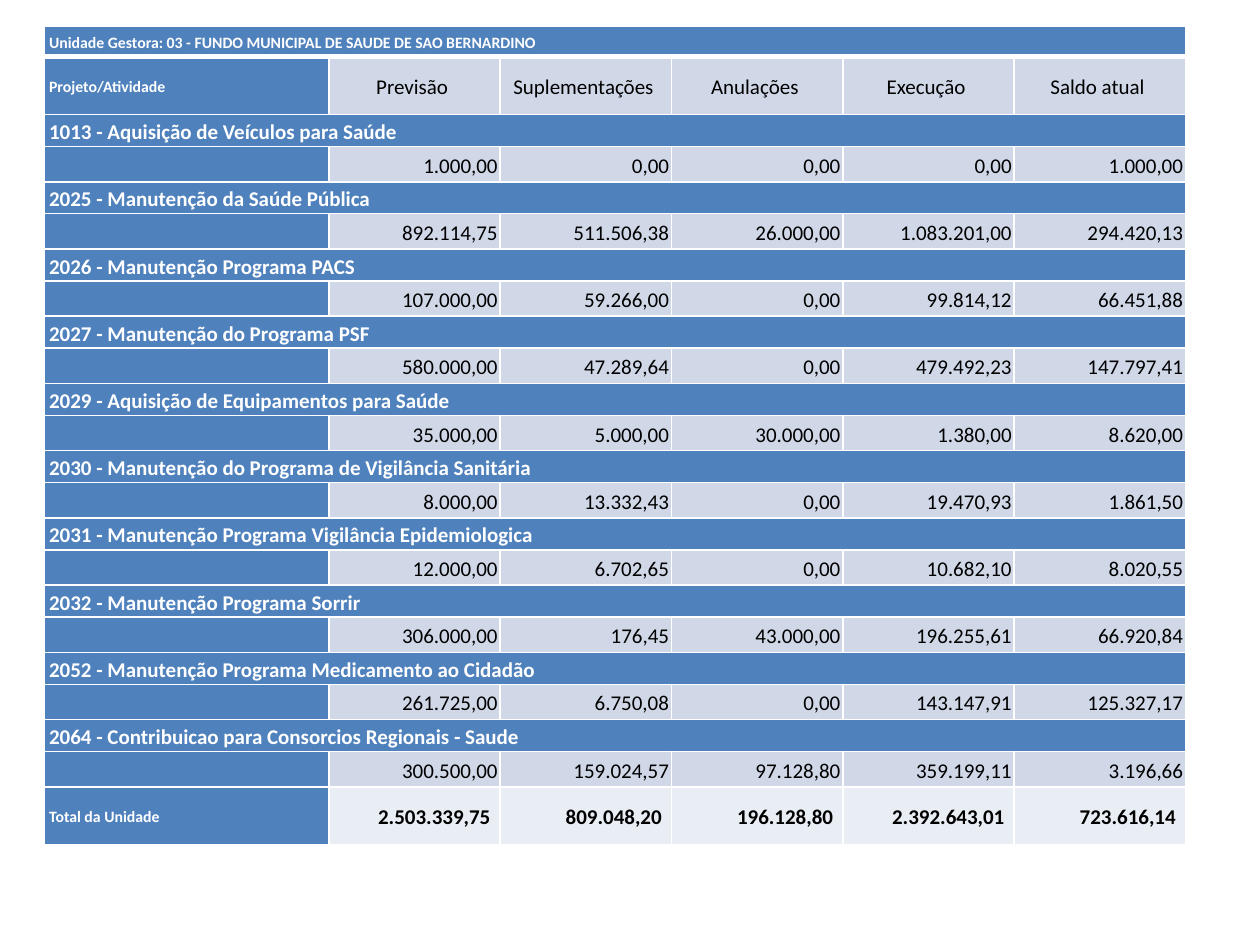
import dataclasses
import itertools

import lxml.etree
import pptx
import pptx.dml.color
import pptx.enum.text
import pptx.oxml.ns
import pptx.table
import pptx.util

ALIGN = pptx.enum.text.PP_ALIGN
SLIDE_WIDTH, SLIDE_HEIGHT = 10, 7.5
TABLE_LEFT, TABLE_TOP = 0.035, 0.028
LABEL_WIDTH, AMOUNT_WIDTH = 2.26, 1.36
BLUE, PALE, PALEST, WHITE, BLACK = "4F81BD", "D0D8E8", "E9EDF4", "FFFFFF", "000000"


@dataclasses.dataclass(frozen=True)
class CellStyle:
    fill: str
    color: str
    size: int = 12
    bold: bool = False
    align: ALIGN = ALIGN.LEFT
    margin_x: float = 0.04
    margin_y: float = 0.01
    bottom_line: int = 1


@dataclasses.dataclass(frozen=True)
class Band:
    height: float
    label: str
    label_style: CellStyle
    amounts: tuple[str, ...] = ()
    amount_style: CellStyle | None = None


@dataclasses.dataclass(frozen=True)
class Project:
    name: str
    amounts: tuple[str, ...]


UNIT = CellStyle(BLUE, WHITE, size=9, bold=True, bottom_line=3)
SIDE = CellStyle(BLUE, WHITE, size=9, bold=True)
PROJECT = CellStyle(BLUE, WHITE, bold=True)
HEADING = CellStyle(PALE, BLACK, align=ALIGN.CENTER)
AMOUNT = CellStyle(PALE, BLACK, align=ALIGN.RIGHT, margin_x=0.02, margin_y=0.02)
TOTAL = CellStyle(PALEST, BLACK, bold=True, align=ALIGN.RIGHT)

HEADINGS = ("Previsão ", "Suplementações ", "Anulações ", "Execução ", "Saldo atual ")
TOTALS = ("2.503.339,75 ", "809.048,20 ", "196.128,80 ", "2.392.643,01 ", "723.616,14 ")
PROJECTS = [
    Project("1013 - Aquisição de Veículos para Saúde",
            ("1.000,00", "0,00", "0,00", "0,00", "1.000,00")),
    Project("2025 - Manutenção da Saúde Pública",
            ("892.114,75", "511.506,38", "26.000,00", "1.083.201,00", "294.420,13")),
    Project("2026 - Manutenção Programa PACS",
            ("107.000,00", "59.266,00", "0,00", "99.814,12", "66.451,88")),
    Project("2027 - Manutenção do Programa PSF",
            ("580.000,00", "47.289,64", "0,00", "479.492,23", "147.797,41")),
    Project("2029 - Aquisição de Equipamentos para Saúde",
            ("35.000,00", "5.000,00", "30.000,00", "1.380,00", "8.620,00")),
    Project("2030 - Manutenção do Programa de Vigilância Sanitária",
            ("8.000,00", "13.332,43", "0,00", "19.470,93", "1.861,50")),
    Project("2031 - Manutenção Programa Vigilância Epidemiologica",
            ("12.000,00", "6.702,65", "0,00", "10.682,10", "8.020,55")),
    Project("2032 - Manutenção Programa Sorrir",
            ("306.000,00", "176,45", "43.000,00", "196.255,61", "66.920,84")),
    Project("2052 - Manutenção Programa Medicamento ao Cidadão",
            ("261.725,00", "6.750,08", "0,00", "143.147,91", "125.327,17")),
    Project("2064 - Contribuicao para Consorcios Regionais - Saude",
            ("300.500,00", "159.024,57", "97.128,80", "359.199,11", "3.196,66")),
]


def rgb(value: str) -> pptx.dml.color.RGBColor:
    return pptx.dml.color.RGBColor.from_string(value)


def draw_borders(cell: pptx.table._Cell, bottom: int, top: int) -> None:
    qn = pptx.oxml.ns.qn
    properties = cell._tc.get_or_add_tcPr()
    for side, points in (("L", 1), ("R", 1), ("T", top), ("B", bottom)):
        line = lxml.etree.SubElement(properties, qn(f"a:ln{side}"), w=str(pptx.util.Pt(points)))
        solid = lxml.etree.SubElement(line, qn("a:solidFill"))
        lxml.etree.SubElement(solid, qn("a:srgbClr"), val=WHITE)


def fill_cell(cell: pptx.table._Cell, text: str, style: CellStyle, top: int) -> None:
    draw_borders(cell, style.bottom_line, top)
    cell.fill.solid()
    cell.fill.fore_color.rgb = rgb(style.fill)
    cell.margin_left = cell.margin_right = pptx.util.Inches(style.margin_x)
    cell.margin_top = cell.margin_bottom = pptx.util.Inches(style.margin_y)
    cell.vertical_anchor = pptx.enum.text.MSO_ANCHOR.MIDDLE
    paragraph = cell.text_frame.paragraphs[0]
    paragraph.alignment = style.align
    paragraph.line_spacing = 1.15
    if not text:
        lxml.etree.SubElement(paragraph._p, pptx.oxml.ns.qn("a:endParaRPr"),
                              sz=str(style.size * 100))
        return
    paragraph.text = text
    for run in paragraph.runs:
        run.font.name = "Calibri"
        run.font.size = pptx.util.Pt(style.size)
        run.font.bold = style.bold
        run.font.color.rgb = rgb(style.color)


def draw_band(table: pptx.table.Table, row: int, band: Band, top: int) -> None:
    table.rows[row].height = pptx.util.Inches(band.height)
    last = len(HEADINGS)
    if not band.amounts:
        table.cell(row, 0).merge(table.cell(row, last))
    amounts = band.amounts or ("",) * last
    fill_cell(table.cell(row, 0), band.label, band.label_style, top)
    for column, amount in enumerate(amounts, start=1):
        fill_cell(table.cell(row, column), amount, band.amount_style or band.label_style, top)


def budget_bands() -> list[Band]:
    project_bands = itertools.chain.from_iterable(
        (Band(0.25, project.name, PROJECT),
         Band(0.28, "", PROJECT, project.amounts, AMOUNT))
        for project in PROJECTS
    )
    return [
        Band(0.24, "Unidade Gestora: 03 - FUNDO MUNICIPAL DE SAUDE DE SAO BERNARDINO", UNIT),
        Band(0.46, "Projeto/Atividade", SIDE, HEADINGS, HEADING),
        *project_bands,
        Band(0.46, "Total da Unidade", SIDE, TOTALS, TOTAL),
    ]


def main() -> None:
    presentation = pptx.Presentation()
    presentation.slide_width = pptx.util.Inches(SLIDE_WIDTH)
    presentation.slide_height = pptx.util.Inches(SLIDE_HEIGHT)
    slide = presentation.slides.add_slide(presentation.slide_layouts[6])
    bands = budget_bands()
    widths = [LABEL_WIDTH] + [AMOUNT_WIDTH] * len(HEADINGS)
    budget = slide.shapes.add_table(
        len(bands), len(widths),
        pptx.util.Inches(TABLE_LEFT * SLIDE_WIDTH), pptx.util.Inches(TABLE_TOP * SLIDE_HEIGHT),
        pptx.util.Inches(sum(widths)), pptx.util.Inches(sum(band.height for band in bands)),
    ).table
    for column, width in zip(budget.columns, widths):
        column.width = pptx.util.Inches(width)
    top = 1
    for row, band in enumerate(bands):
        draw_band(budget, row, band, top)
        top = band.label_style.bottom_line
    presentation.save("out.pptx")


if __name__ == "__main__":
    main()
